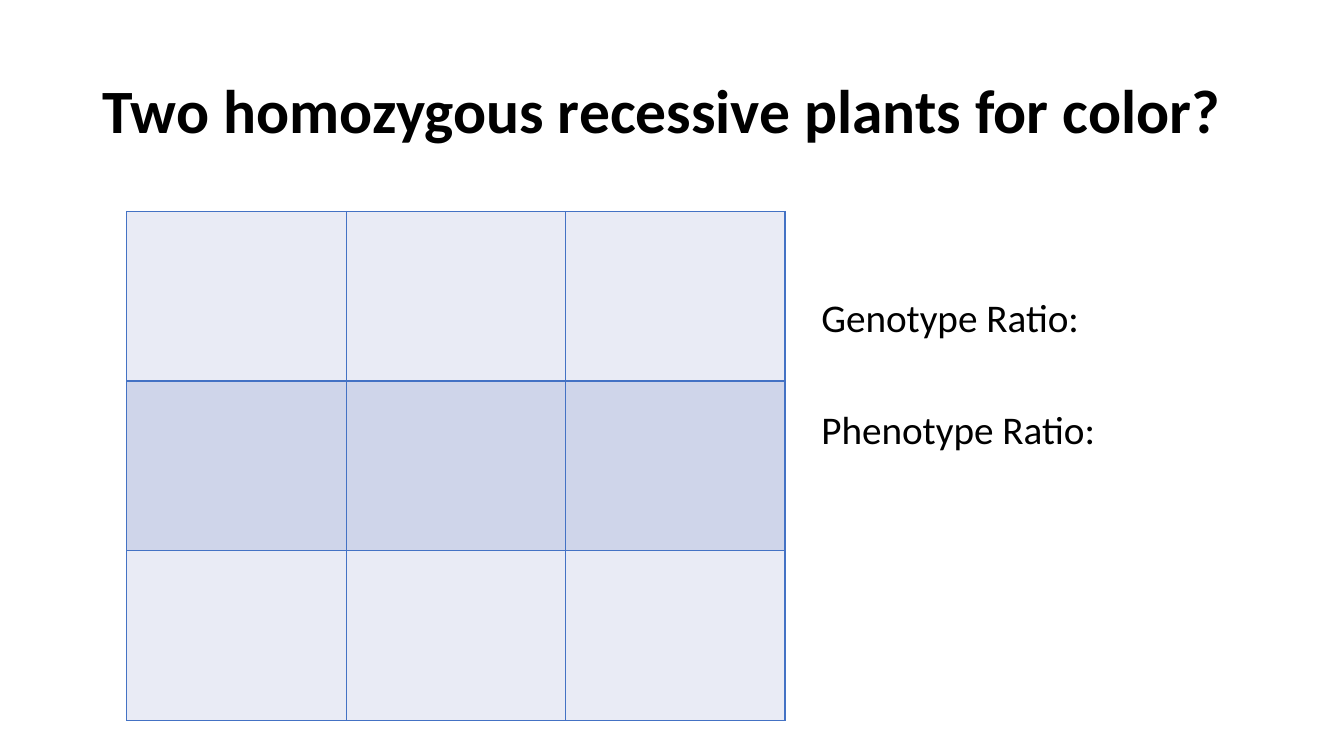
from lxml import etree
from pptx import Presentation
from pptx.dml.color import RGBColor
from pptx.enum import text as tx
from pptx.oxml import ns
from pptx.util import Pt

BLACK = RGBColor(0x00, 0x00, 0x00)
BORDER = RGBColor(0x44, 0x72, 0xC4)
LIGHT_BAND = RGBColor(0xE9, 0xEB, 0xF5)
DARK_BAND = RGBColor(0xCF, 0xD5, 0xEA)


def write(paragraph, content, size=28, bold=False, before=0, font="Calibri", color=BLACK):
    paragraph.line_spacing = 0.9
    paragraph.space_before = Pt(before)
    run = paragraph.add_run()
    run.text = content
    run.font.name = font
    run.font.size = Pt(size)
    run.font.bold = bold
    run.font.color.rgb = color


def outline(cell, color, width):
    properties = cell._tc.get_or_add_tcPr()
    for position, side in enumerate(("a:lnL", "a:lnR", "a:lnT", "a:lnB")):
        line = etree.Element(ns.qn(side), w=str(Pt(width)))
        fill = etree.SubElement(line, ns.qn("a:solidFill"))
        etree.SubElement(fill, ns.qn("a:srgbClr"), val=str(color))
        properties.insert(position, line)


class PunnettSlide:
    def __init__(self, presentation):
        self.slide = presentation.slides.add_slide(presentation.slide_layouts[6])
        self.bands = (LIGHT_BAND, DARK_BAND)

    def text(self, lines, left, top, width, height, anchor=tx.MSO_ANCHOR.TOP, gap=0, **style):
        box = self.slide.shapes.add_textbox(Pt(left), Pt(top), Pt(width), Pt(height))
        frame = box.text_frame
        frame.word_wrap = True
        frame.vertical_anchor = anchor
        for index, content in enumerate(lines):
            paragraph = frame.add_paragraph() if index else frame.paragraphs[0]
            write(paragraph, content, before=gap if index else 0, **style)

    def square(self, size, left, top, width, height):
        frame = self.slide.shapes.add_table(
            size, size, Pt(left), Pt(top), Pt(width), Pt(height))
        grid = frame.table
        grid.first_row = grid.horz_banding = False
        for column in grid.columns:
            column.width = Pt(width / size)
        for index, row in enumerate(grid.rows):
            row.height = Pt(height / size)
            for cell in row.cells:
                cell.fill.solid()
                cell.fill.fore_color.rgb = self.bands[index % 2]
                outline(cell, BORDER, 1)


def main():
    presentation = Presentation()
    presentation.slide_width = Pt(960)
    presentation.slide_height = Pt(540)
    cross = PunnettSlide(presentation)
    cross.text(["Two homozygous recessive plants for color?"], 66, 28.75, 828, 104.4,
               anchor=tx.MSO_ANCHOR.MIDDLE, size=44, bold=True)
    cross.square(3, 90.6, 151, 470.1, 363.6)
    cross.text(["Genotype Ratio:", "Phenotype Ratio:"], 579.6, 209.5, 211.7, 150.5, gap=50)
    presentation.save("out.pptx")


if __name__ == "__main__":
    main()
